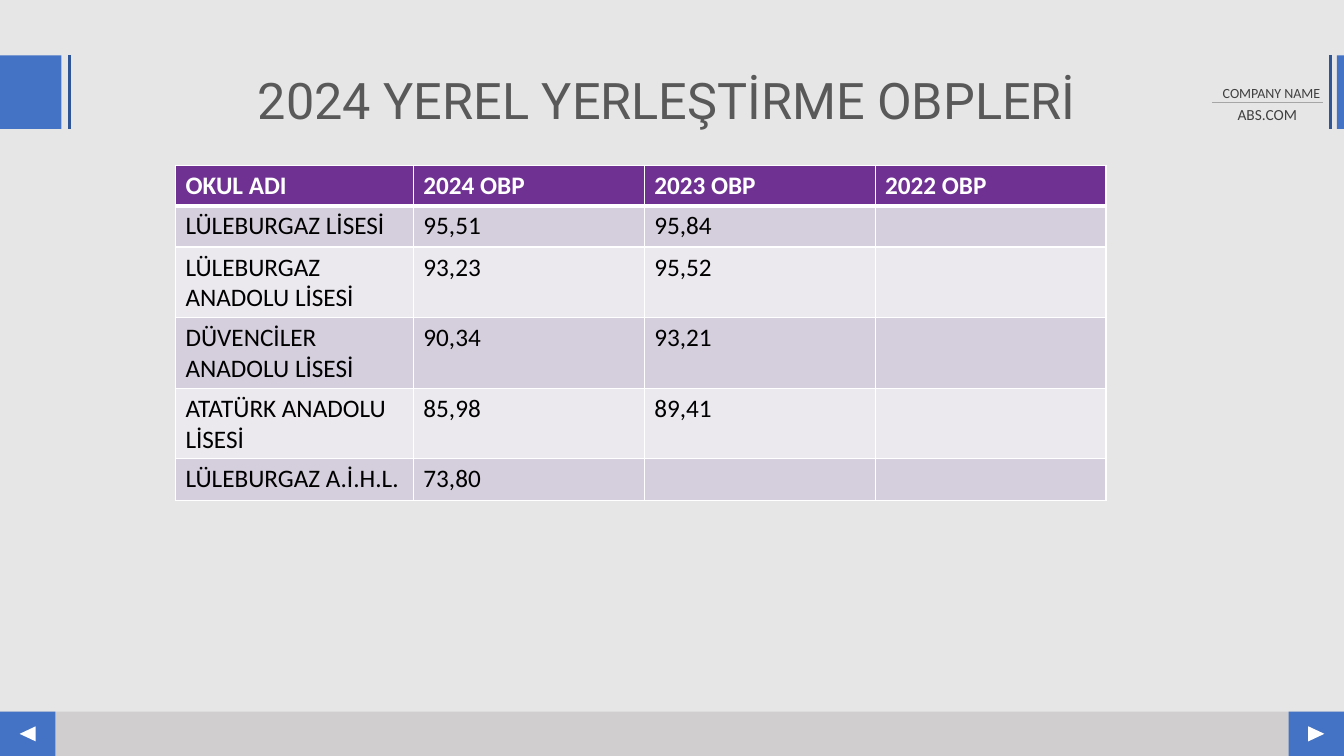
import pptx
import pptx.util
import pptx.dml.color
import pptx.enum.shapes
import pptx.enum.text
import pptx.oxml.ns
import lxml.etree

Inches = pptx.util.Inches
Pt = pptx.util.Pt
SHAPE = pptx.enum.shapes.MSO_SHAPE
ALIGN = pptx.enum.text.PP_ALIGN
qn = pptx.oxml.ns.qn

COLORS = {
    "background": "E7E6E6", "footer": "D0CECE", "blue": "4472C4", "navy": "2F5597",
    "white": "FFFFFF", "black": "000000", "title": "595959", "company": "404040",
    "rule": "A6A6A6", "header": "6F3293", "odd": "D5CEDC", "even": "EBE8EE",
}
HEADERS = ["OKUL ADI", "2024 OBP", "2023 OBP", "2022 OBP"]
SCHOOLS = [
    ("LÜLEBURGAZ LİSESİ", "95,51", "95,84", ""),
    ("LÜLEBURGAZ ANADOLU LİSESİ", "93,23", "95,52", ""),
    ("DÜVENCİLER ANADOLU LİSESİ", "90,34", "93,21", ""),
    ("ATATÜRK ANADOLU LİSESİ", "85,98", "89,41", ""),
    ("LÜLEBURGAZ A.İ.H.L.", "73,80", "", ""),
]
COLUMN_WIDTHS = [2.36, 2.29, 2.29, 2.29]
HEADER_HEIGHT, ROW_HEIGHT = 0.33, 0.41
BLOCKS = [
    (0, 7.06, 13.33, 0.44, "footer"),
    (12.78, 7.06, 0.55, 0.44, "blue"),
    (0, 7.06, 0.55, 0.44, "blue"),
    (13.26, 0.55, 0.07, 0.73, "blue"),
    (0, 0.55, 0.61, 0.73, "blue"),
]
ARROWS = [(12.98, 90), (0.2, 270)]
LINES = [
    (13.2, 0.55, 13.2, 1.28, "navy", 2.25),
    (0.69, 0.55, 0.69, 1.28, "navy", 2.25),
    (12.02, 1.02, 13.12, 1.02, "rule", 0.5),
]
TEXTS = [
    ("COMPANY NAME", 12.02, 0.79, 1.18, 0.27, 10, "Calibri", "company", False, ALIGN.CENTER),
    ("ABS.COM", 12.02, 0.99, 1.1, 0.29, 11, "Calibri", "company", False, ALIGN.CENTER),
    ("2024 YEREL YERLEŞTİRME OBPLERİ", 0.34, 0.7, 12.55, 0.87, 36, "Roboto", "title", False,
     ALIGN.CENTER),
]


def rgb(name):
    return pptx.dml.color.RGBColor.from_string(COLORS[name])


def paint(fill, name):
    fill.solid()
    fill.fore_color.rgb = rgb(name)


def style_text(tf, size, font, color, bold, align=ALIGN.LEFT):
    for p in tf.paragraphs:
        p.alignment = align
        for r in p.runs:
            r.font.size = Pt(size)
            r.font.name = font
            r.font.bold = bold
            r.font.color.rgb = rgb(color)


def add_block(slide, kind, x, y, w, h, color):
    s = slide.shapes.add_shape(kind, Inches(x), Inches(y), Inches(w), Inches(h))
    s.shadow.inherit = False
    paint(s.fill, color)
    s.line.fill.background()
    return s


def add_line(slide, x1, y1, x2, y2, color, width):
    s = slide.shapes.add_connector(pptx.enum.shapes.MSO_CONNECTOR.STRAIGHT,
                                   Inches(x1), Inches(y1), Inches(x2), Inches(y2))
    s.line.color.rgb = rgb(color)
    s.line.width = Pt(width)
    lxml.etree.SubElement(s._element.spPr, qn("a:effectLst"))


def add_text(slide, text, x, y, w, h, *style):
    tf = slide.shapes.add_textbox(Inches(x), Inches(y), Inches(w), Inches(h)).text_frame
    tf.word_wrap = True
    tf.text = text
    style_text(tf, *style)
    return tf


def set_borders(cell, widths):
    tcPr = cell._tc.get_or_add_tcPr()
    for i, (side, width) in enumerate(widths.items()):
        ln = lxml.etree.Element(qn("a:ln" + side), w=str(Pt(width)))
        fill = lxml.etree.SubElement(ln, qn("a:solidFill"))
        lxml.etree.SubElement(fill, qn("a:srgbClr"), val=COLORS["white"])
        tcPr.insert(i, ln)


def add_scores(slide):
    rows = [HEADERS] + SCHOOLS
    height = HEADER_HEIGHT + ROW_HEIGHT * len(SCHOOLS)
    table = slide.shapes.add_table(len(rows), len(HEADERS), Inches(1.74), Inches(1.64),
                                   Inches(sum(COLUMN_WIDTHS)), Inches(height)).table
    for column, width in zip(table.columns, COLUMN_WIDTHS):
        column.width = Inches(width)
    for i, values in enumerate(rows):
        head = i == 0
        table.rows[i].height = Inches(HEADER_HEIGHT if head else ROW_HEIGHT)
        for j, value in enumerate(values):
            cell = table.cell(i, j)
            cell.text_frame.text = value
            style_text(cell.text_frame, 18, "Calibri", "white" if head else "black", head)
            paint(cell.fill, "header" if head else "odd" if i % 2 else "even")
            set_borders(cell, {"L": 1, "R": 1, "T": 3 if i == 1 else 1, "B": 3 if head else 1})


def main():
    prs = pptx.Presentation()
    prs.slide_width, prs.slide_height = Inches(13.33), Inches(7.5)
    slide = prs.slides.add_slide(prs.slide_layouts[6])
    paint(slide.background.fill, "background")
    for block in BLOCKS:
        add_block(slide, SHAPE.RECTANGLE, *block)
    for x, rotation in ARROWS:
        add_block(slide, SHAPE.ISOSCELES_TRIANGLE, x, 7.2, 0.15, 0.16, "white").rotation = rotation
    for line in LINES:
        add_line(slide, *line)
    frames = [add_text(slide, *text) for text in TEXTS]
    frames[-1].paragraphs[0].line_spacing = 0.9
    add_scores(slide)
    prs.save("out.pptx")


if __name__ == "__main__":
    main()
